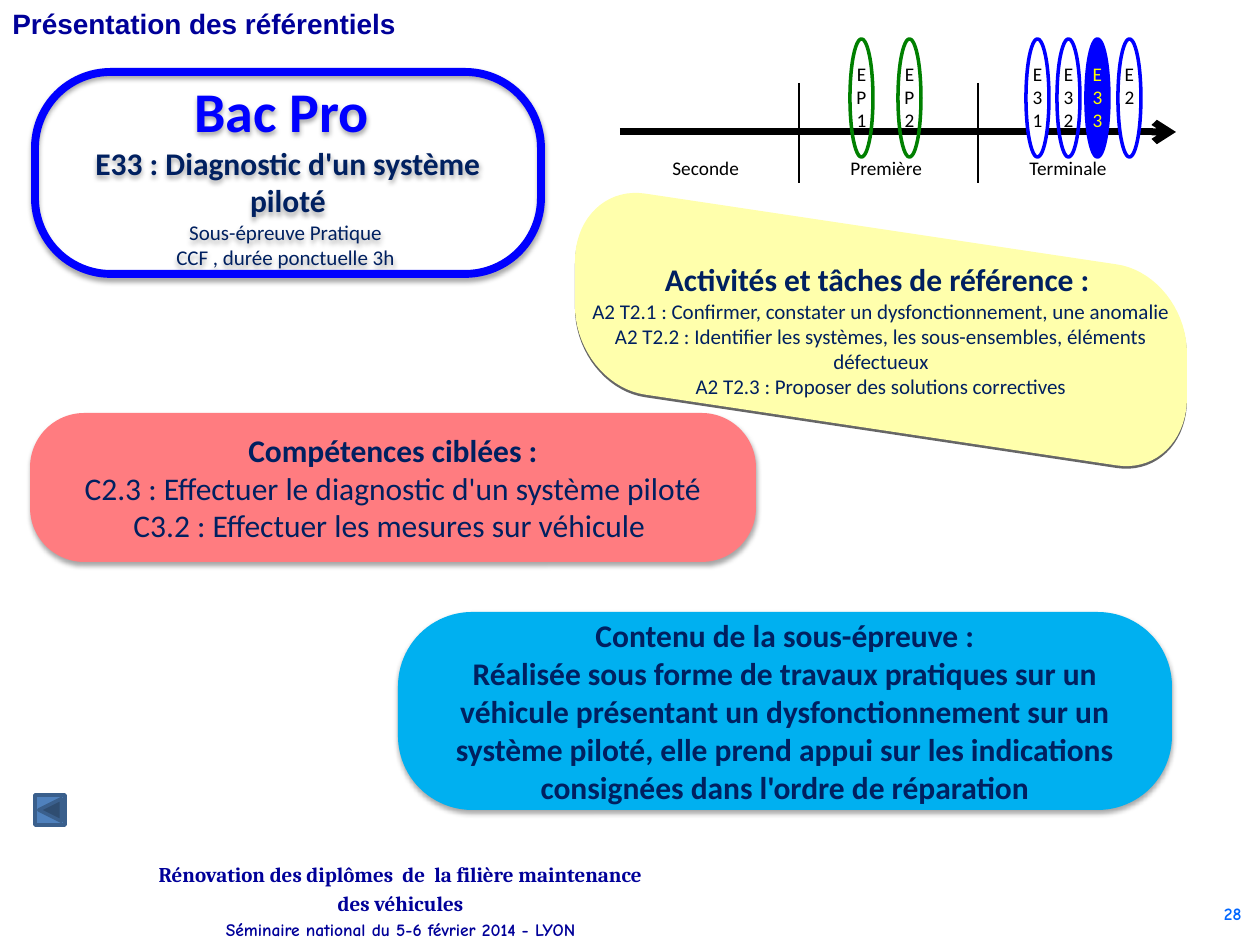
import math

from lxml import etree
from pptx import Presentation, util as u
from pptx.dml.color import RGBColor
from pptx.enum import shapes as sh, text as tx
from pptx.oxml.ns import qn

PX = 914400 / 126
NAVY, BLUE, GREEN, TITLE_BLUE = "002060", "0000FF", "008000", "000099"
SOFT = dict(blur=3.1, dist=1.8, alpha=35)


def px(n):
    return u.Emu(round(n * PX))


def color(hex_code):
    return RGBColor.from_string(hex_code)


def sub(parent, tag, **attrs):
    return etree.SubElement(parent, qn(tag), {k: str(v) for k, v in attrs.items()})


def paint(shape, fill=None, line=None, weight=2):
    shape.shadow.inherit = False
    if fill:
        shape.fill.solid()
        shape.fill.fore_color.rgb = color(fill)
    else:
        shape.fill.background()
    if line:
        shape.line.color.rgb = color(line)
        shape.line.width = u.Pt(weight)
    else:
        shape.line.fill.background()


def cast_shadow(shape, blur, dist, alpha, hex_code="000000"):
    effects = shape._element.spPr.find(qn("a:effectLst"))
    outer = sub(effects, "a:outerShdw", blurRad=u.Pt(blur), dist=u.Pt(dist),
                dir=5400000, algn="t", rotWithShape=0)
    sub(sub(outer, "a:srgbClr", val=hex_code), "a:alpha", val=alpha * 1000)


def write(shape, lines, font="Calibri", align="CENTER", anchor="MIDDLE",
          wrap=True, spacing=None):
    """Each line is (text, size, hex colour, bold)."""
    frame = shape.text_frame
    frame.word_wrap = wrap
    frame.vertical_anchor = getattr(tx.MSO_ANCHOR, anchor)
    for i, (words, size, hex_code, bold, *own_font) in enumerate(lines):
        para = frame.add_paragraph() if i else frame.paragraphs[0]
        para.alignment = getattr(tx.PP_ALIGN, align)
        if spacing:
            para.line_spacing = spacing
        run = para.add_run()
        run.text = words
        run.font.name = own_font[0] if own_font else font
        run.font.size = u.Pt(size)
        run.font.bold = bold
        run.font.color.rgb = color(hex_code)


def label(slide, box, lines, **style):
    write(slide.shapes.add_textbox(*map(px, box)), lines, **style)


def page_furniture(slide, box):
    x, y, w, h = box
    label(slide, (x, y, 412, 47), [("Présentation des référentiels", 16, TITLE_BLUE, True)],
          font="Arial", align="LEFT", anchor="TOP", wrap=False)
    label(slide, (x + 144, y + h - 82, 513, 71), [
        ("Rénovation des diplômes  de  la filière maintenance des véhicules",
         12, TITLE_BLUE, True, "Cambria"),
        ("Séminaire national du 5-6 février 2014 - LYON", 10, TITLE_BLUE, True),
    ], font="Comic Neue", spacing=1.15)
    label(slide, (x + w - 82, y + h - 48, 76, 40), [("28", 10, "0066FF", True)],
          font="Comic Neue", align="RIGHT", anchor="TOP")
    back_button = slide.shapes.add_shape(
        sh.MSO_SHAPE.ACTION_BUTTON_BACK_OR_PREVIOUS,
        px(x + 35), px(y + 795), px(30), px(30))
    paint(back_button, "4F81BD", "3A5F8C")


def rounded_panel(slide, box, lines, rounding=0.375, fill=None, line=None):
    panel = slide.shapes.add_shape(sh.MSO_SHAPE.ROUNDED_RECTANGLE, *map(px, box))
    panel.adjustments[0] = rounding
    paint(panel, fill, line, 4.5)
    cast_shadow(panel, **SOFT)
    write(panel, lines)


def slanted_panel(slide, box, lines, fill, side=201, rx=70, ry=78, slope=0.15):
    """Rounded rectangle whose right side slides down by the slope."""
    x, y, w, h = box
    top = (h - side - slope * w) / 2
    corners = [(w - rx, ry, 270), (w - rx, side - ry, 0),
               (rx, side - ry, 90), (rx, ry, 180)]
    points = []
    for cx, cy, start in corners:
        for angle in range(start, start + 91, 5):
            dx = cx + rx * math.cos(math.radians(angle))
            dy = cy + ry * math.sin(math.radians(angle))
            points.append((px(x + dx), px(y + top + dy + slope * dx)))
    builder = slide.shapes.build_freeform(*points[0])
    builder.add_line_segments(points[1:], close=True)
    panel = builder.convert_to_shape()
    paint(panel, fill)
    cast_shadow(panel, blur=0, dist=1.5, alpha=100, hex_code="666666")
    write(panel, lines)


def rule(slide, start, end, weight):
    line = slide.shapes.add_connector(sh.MSO_CONNECTOR.STRAIGHT,
                                      *map(px, (*start, *end)))
    line.line.color.rgb = color("000000")
    line.line.width = u.Pt(weight)
    sub(line._element.spPr, "a:effectLst")
    return line


def timeline(slide, box):
    x, y, w, h = box
    # Axis and year separators
    axis = rule(slide, (x, y + 93), (x + w, y + 93), 4)
    sub(axis.line._get_or_add_ln(), "a:tailEnd", type="arrow")
    for separator in (179, 358):
        rule(slide, (x + separator, y + 44), (x + separator, y + 144), 1.5)
    # School years
    for year, left in (("Seconde", 40), ("Première", 218), ("Terminale", 397)):
        label(slide, (x + left, y + 111, 110, 36), [(year, 11, "000000", False)],
              align="LEFT", anchor="TOP", wrap=False)
    # Exams
    exams = [("E2", 498, "FFFFFF", BLUE, "000000"), ("E31", 406, "FFFFFF", BLUE, "000000"),
             ("E32", 437, None, BLUE, "000000"), ("E33", 466, BLUE, BLUE, "FFFF00"),
             ("EP2", 278, None, GREEN, "000000"), ("EP1", 230, None, GREEN, "000000")]
    for exam, left, fill, outline, ink in exams:
        oval = slide.shapes.add_shape(sh.MSO_SHAPE.OVAL, px(x + left), px(y),
                                      px(23), px(118))
        paint(oval, fill, outline)
        oval.text_frame.margin_left = oval.text_frame.margin_right = 0
        write(oval, [(exam, 11, ink, False)], anchor="TOP")


def main():
    prs = Presentation()
    prs.slide_width, prs.slide_height = px(1260), px(945)
    slide = prs.slides.add_slide(prs.slide_layouts[6])

    page_furniture(slide, (0, 0, 1260, 945))
    rounded_panel(slide, (35, 72, 506, 202), [
        ("Bac Pro ", 32, BLUE, True),
        ("E33 : Diagnostic d'un système piloté", 18, NAVY, True),
        ("Sous-épreuve Pratique ", 12, NAVY, False),
        ("CCF , durée ponctuelle 3h ", 12, NAVY, False),
    ], line=BLUE)
    slanted_panel(slide, (575, 193, 612, 273), [
        ("Activités et tâches de référence : ", 18, NAVY, True),
        ("A2 T2.1 : Confirmer, constater un dysfonctionnement, une anomalie",
         12, NAVY, False),
        ("A2 T2.2 : Identifier les systèmes, les sous-ensembles, éléments défectueux",
         12, NAVY, False),
        ("A2 T2.3 : Proposer des solutions correctives", 12, NAVY, False),
    ], fill="FFFFAC")
    rounded_panel(slide, (30, 413, 726, 149), [
        ("Compétences ciblées :", 18, NAVY, True),
        ("C2.3 : Effectuer le diagnostic d'un système piloté", 18, NAVY, False),
        ("C3.2 : Effectuer les mesures sur véhicule ", 18, NAVY, False),
    ], rounding=0.365, fill="FF7C80")
    rounded_panel(slide, (398, 612, 774, 198), [
        ("Contenu de la sous-épreuve :", 18, NAVY, True),
        ("Réalisée sous forme de travaux pratiques sur un véhicule présentant un "
         "dysfonctionnement sur un système piloté, elle prend appui sur les "
         "indications consignées dans l'ordre de réparation", 18, NAVY, True),
    ], fill="00B0F0")
    timeline(slide, (620, 39, 556, 144))

    prs.save("out.pptx")


if __name__ == "__main__":
    main()
